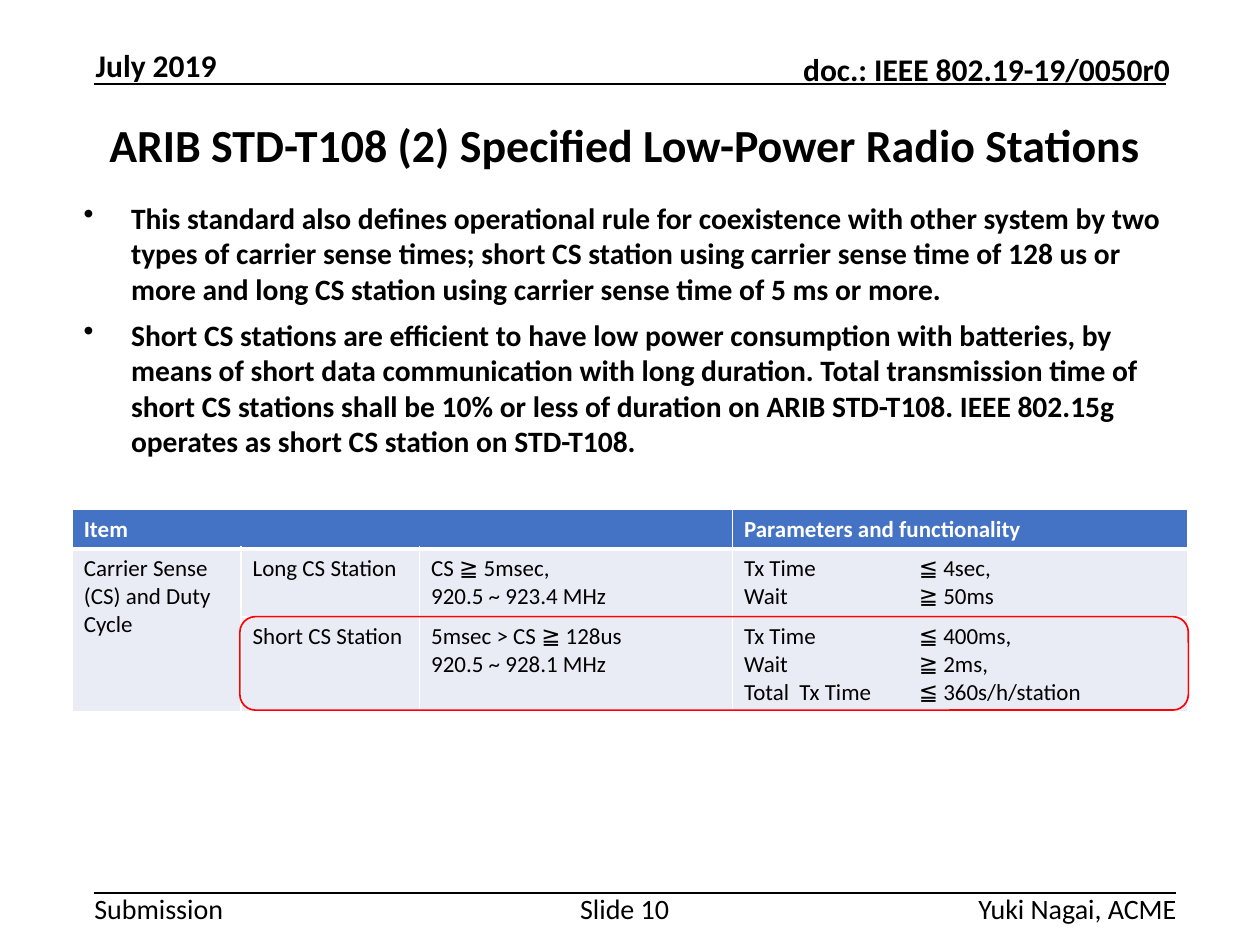
from dataclasses import dataclass

from lxml import etree
from pptx import Presentation
from pptx.dml.color import RGBColor
from pptx.enum.shapes import MSO_CONNECTOR, MSO_SHAPE
from pptx.enum.text import MSO_ANCHOR, PP_ALIGN
from pptx.oxml.ns import qn
from pptx.util import Cm, Pt

LEFT, CENTER, RIGHT = PP_ALIGN.LEFT, PP_ALIGN.CENTER, PP_ALIGN.RIGHT
TOP, MIDDLE, BOTTOM = MSO_ANCHOR.TOP, MSO_ANCHOR.MIDDLE, MSO_ANCHOR.BOTTOM
STRAIGHT = MSO_CONNECTOR.STRAIGHT
ROUNDED = MSO_SHAPE.ROUNDED_RECTANGLE


@dataclass(frozen=True)
class Theme:
    font: str = "Calibri"
    ink: RGBColor = RGBColor(0, 0, 0)
    white: RGBColor = RGBColor(255, 255, 255)
    header_fill: RGBColor = RGBColor(0x44, 0x72, 0xC4)
    cell_fill: RGBColor = RGBColor(0xE9, 0xEB, 0xF5)
    highlight: RGBColor = RGBColor(255, 0, 0)
    title_size: float = 28
    body_size: float = 18
    header_size: float = 19.2
    footer_size: float = 17.1
    table_size: float = 14


THEME = Theme()
PADDING = (0.25, 0.13)
TAB_STEP = 1.253
COLUMN_WIDTHS = (3.63, 3.84, 6.73, 9.8)
ROW_HEIGHTS = (0.82, 1.47, 2.03)

BULLETS = (
    "This standard also defines operational rule for coexistence with other system by two "
    "types of carrier sense times; short CS station using carrier sense time of 128 us or "
    "more and long CS station using carrier sense time of 5 ms or more.",
    "Short CS stations are efficient to have low power consumption with batteries, by means "
    "of short data communication with long duration. Total transmission time of short CS "
    "stations shall be 10% or less of duration on ARIB STD-T108. IEEE 802.15g operates as "
    "short CS station on STD-T108.",
)
TABLE_ROWS = (
    ("Item", "", "", "Parameters and functionality"),
    ("Carrier Sense (CS) and Duty Cycle", "Long CS Station",
     "CS ≧ 5msec,\n920.5 ~ 923.4 MHz",
     "Tx Time \t\t≦ 4sec,\nWait\t\t\t≧ 50ms"),
    ("", "Short CS Station",
     "5msec > CS ≧ 128us\n920.5 ~ 928.1 MHz",
     "Tx Time \t\t≦ 400ms,\nWait\t\t\t≧ 2ms,\nTotal  Tx Time\t≦ 360s/h/station"),
)


def style_paragraph(paragraph, size, bold=False, color=THEME.ink):
    """Set the font of a whole paragraph."""
    font = paragraph.font
    font.name, font.size, font.bold = THEME.font, Pt(size), bold
    font.color.rgb = color


def add_text(slide, box, lines, size, bold=False, align=LEFT, anchor=TOP, padding=(0, 0)):
    """Add a text box and return its paragraphs."""
    frame = slide.shapes.add_textbox(*map(Cm, box)).text_frame
    frame.word_wrap = True
    frame.vertical_anchor = anchor
    frame.margin_left = frame.margin_right = Cm(padding[0])
    frame.margin_top = frame.margin_bottom = Cm(padding[1])
    frame.text = "\n".join(lines)
    for paragraph in frame.paragraphs:
        paragraph.alignment = align
        style_paragraph(paragraph, size, bold)
    return frame.paragraphs


def add_bullets(slide, box, lines):
    """Add a bold bulleted list with hanging indents."""
    for paragraph in add_text(slide, box, lines, THEME.body_size, True, padding=PADDING):
        paragraph.space_before = Pt(6.4)
        properties = paragraph._p.get_or_add_pPr()
        properties.set("marL", str(Cm(1.02)))
        properties.set("indent", str(Cm(-1.02)))
        bullet = etree.Element(qn("a:buChar"), char="•")
        properties.find(qn("a:spcBef")).addnext(bullet)


def add_rule(slide, left, right, y):
    """Add a thin horizontal rule."""
    rule = slide.shapes.add_connector(STRAIGHT, Cm(left), Cm(y), Cm(right), Cm(y))
    rule.line.color.rgb = THEME.ink
    rule.line.width = Pt(1)
    etree.SubElement(rule._element.spPr, qn("a:effectLst"))


def add_borders(cell, bottom_width):
    """Draw white borders around a table cell."""
    properties = cell._tc.get_or_add_tcPr()
    for side, width in (("L", 1), ("R", 1), ("T", 1), ("B", bottom_width)):
        line = etree.SubElement(properties, qn(f"a:ln{side}"), w=str(Pt(width)))
        fill = etree.SubElement(line, qn("a:solidFill"))
        etree.SubElement(fill, qn("a:srgbClr"), val=str(THEME.white))


def add_tab_stops(paragraph):
    """Set the tab stops that align the limits."""
    tabs = etree.SubElement(paragraph._p.get_or_add_pPr(), qn("a:tabLst"))
    for step in (1, 2, 3):
        etree.SubElement(tabs, qn("a:tab"), pos=str(Cm(TAB_STEP * step)), algn="l")


def fill_cell(cell, text, is_header):
    """Write and style one table cell."""
    add_borders(cell, 3 if is_header else 1)
    cell.fill.solid()
    cell.fill.fore_color.rgb = THEME.header_fill if is_header else THEME.cell_fill
    cell.text = text
    for paragraph in cell.text_frame.paragraphs:
        style_paragraph(paragraph, THEME.table_size, is_header,
                        THEME.white if is_header else THEME.ink)
        if "\t" in paragraph.text:
            add_tab_stops(paragraph)


def add_station_table(slide, left, top):
    """Add the table of carrier sense rules."""
    table = slide.shapes.add_table(
        len(ROW_HEIGHTS), len(COLUMN_WIDTHS), Cm(left), Cm(top),
        Cm(sum(COLUMN_WIDTHS)), Cm(sum(ROW_HEIGHTS))).table
    for column, width in zip(table.columns, COLUMN_WIDTHS):
        column.width = Cm(width)
    for row, height in zip(table.rows, ROW_HEIGHTS):
        row.height = Cm(height)
    for row_index, texts in enumerate(TABLE_ROWS):
        for column_index, text in enumerate(texts):
            fill_cell(table.cell(row_index, column_index), text, row_index == 0)
    table.cell(0, 0).merge(table.cell(0, 2))
    table.cell(1, 0).merge(table.cell(2, 0))


def add_highlight(slide, box):
    """Outline an area with a rounded rectangle."""
    shape = slide.shapes.add_shape(ROUNDED, *map(Cm, box))
    shape.shadow.inherit = False
    shape.fill.background()
    shape.line.color.rgb = THEME.highlight
    shape.line.width = Pt(1)


def main():
    """Build and save the slide."""
    presentation = Presentation()
    presentation.slide_width, presentation.slide_height = Cm(27.1), Cm(20.32)
    slide = presentation.slides.add_slide(presentation.slide_layouts[6])

    add_rule(slide, 2.03, 25.07, 1.8)
    add_rule(slide, 2.03, 25.3, 19.2)
    for box, text, align in (
        ((2.06, 0.99, 5.56, 0.81), "July 2019", LEFT),
        ((14.81, 1.07, 10.36, 0.81), "doc.: IEEE 802.19-19/0050r0", RIGHT),
    ):
        add_text(slide, box, [text], THEME.header_size, True, align, BOTTOM)
    for box, text, align in (
        ((2.03, 19.18, 2.84, 0.74), "Submission", LEFT),
        ((12.42, 19.18, 2.03, 0.74), "Slide 10", CENTER),
        ((15.88, 19.18, 9.42, 0.74), "Yuki Nagai, ACME", RIGHT),
    ):
        add_text(slide, box, [text], THEME.footer_size, align=align)

    add_text(slide, (2.03, 2.03, 23.01, 2.13),
             ["ARIB STD-T108 (2) Specified Low-Power Radio Stations "],
             THEME.title_size, True, CENTER, MIDDLE, PADDING)
    add_bullets(slide, (1.55, 4.17, 24, 5.59), BULLETS)
    add_station_table(slide, 1.55, 10.95)
    add_highlight(slide, (5.16, 13.26, 20.4, 2.01))
    presentation.save("out.pptx")


if __name__ == "__main__":
    main()
